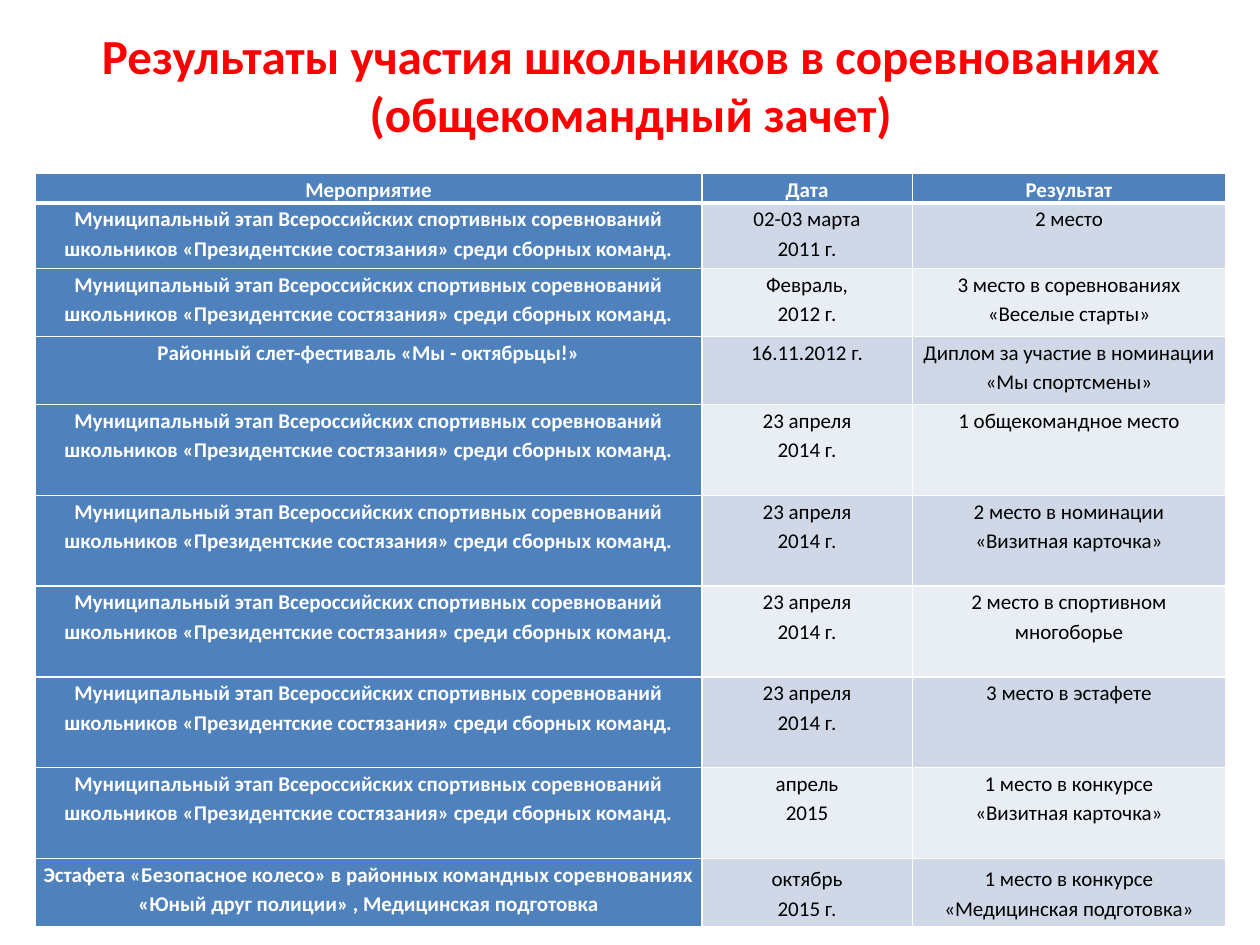
from dataclasses import dataclass

from lxml.etree import SubElement
from pptx import Presentation
from pptx.dml.color import RGBColor as Rgb
from pptx.enum.text import MSO_ANCHOR as Anchor, PP_ALIGN as Align
from pptx.oxml.ns import qn
from pptx.util import Cm, Pt


@dataclass(frozen=True)
class Theme:
    font: str = "Calibri"
    title_size: int = 28
    cell_size: int = 12
    title: str = "FF0000"
    accent: str = "4F81BD"
    light: str = "FFFFFF"
    dark: str = "000000"
    bands: tuple = ("D0D8E8", "E9EDF4")
    thin: int = 1
    thick: int = 3


def write(frame, text, *, font, size, color, bold=False, spacing=None):
    """Fill a text frame: one centred paragraph for each line of text."""
    for index, line in enumerate(text.split("\n")):
        para = frame.add_paragraph() if index else frame.paragraphs[0]
        para.alignment = Align.CENTER
        if spacing:
            para.line_spacing = spacing
        # A vertical tab becomes a line break inside the paragraph
        para.text = line
        for span in para.runs:
            span.font.name = font
            span.font.size = Pt(size)
            span.font.bold = bold
            span.font.color.rgb = Rgb.from_string(color)


class SlideBuilder:
    def __init__(self, deck, theme):
        self.theme = theme
        self.slide = deck.slides.add_slide(deck.slide_layouts[5])

    def title(self, text, left, top, width, height, bottom_inset):
        box = self.slide.shapes.title
        box.left, box.top, box.width, box.height = left, top, width, height
        frame = box.text_frame
        frame.word_wrap = True
        frame.vertical_anchor = Anchor.MIDDLE
        frame.margin_bottom = bottom_inset
        write(frame, text, font=self.theme.font, size=self.theme.title_size,
              color=self.theme.title, bold=True)

    def borders(self, cell, top, bottom):
        properties = cell._tc.get_or_add_tcPr()
        sides = {"L": self.theme.thin, "R": self.theme.thin, "T": top, "B": bottom}
        for index, (side, weight) in enumerate(sides.items()):
            line = SubElement(properties, qn(f"a:ln{side}"), w=str(Pt(weight)))
            fill = SubElement(line, qn("a:solidFill"))
            SubElement(fill, qn("a:srgbClr"), val=self.theme.light)
            properties.insert(index, line)

    def cell(self, cell, text, row, column, anchor):
        theme = self.theme
        heading = row == 0 or column == 0
        fill = theme.accent if heading else theme.bands[(row - 1) % 2]
        cell.fill.solid()
        cell.fill.fore_color.rgb = Rgb.from_string(fill)
        cell.margin_left = cell.margin_right = Cm(0.13)
        cell.margin_top = cell.margin_bottom = 0
        cell.vertical_anchor = anchor
        # The header is set off by a thick rule below it
        self.borders(cell, top=theme.thick if row == 1 else theme.thin,
                     bottom=theme.thick if row == 0 else theme.thin)
        write(cell.text_frame, text, font=theme.font, size=theme.cell_size,
              color=theme.light if heading else theme.dark, bold=heading, spacing=1.15)

    def table(self, records, left, top, widths, heights):
        table = self.slide.shapes.add_table(
            len(records), len(widths), left, top, sum(widths), sum(heights)).table
        table.first_col = True
        for column, width in zip(table.columns, widths):
            column.width = width
        for row, height in zip(table.rows, heights):
            row.height = height
        for row, record in enumerate(records):
            for column, text in enumerate(record):
                closing = row == len(records) - 1 and column > 0
                anchor = Anchor.MIDDLE if closing else Anchor.TOP
                self.cell(table.cell(row, column), text, row, column, anchor)


# Table content
MUNICIPAL = ("Муниципальный этап Всероссийских спортивных соревнований "
             "школьников «Президентские состязания» среди сборных команд.")
APRIL = "23 апреля\n2014 г."
RESULTS = [
    ("Мероприятие", "Дата", "Результат"),
    (MUNICIPAL, "02-03 марта\n2011 г.", "2 место"),
    (MUNICIPAL, "Февраль,\n2012 г.", "3 место в соревнованиях «Веселые старты»"),
    ("Районный слет-фестиваль «Мы - октябрьцы!»", "16.11.2012 г.",
     "Диплом за участие в номинации «Мы спортсмены»"),
    (MUNICIPAL, APRIL, "1 общекомандное место"),
    (MUNICIPAL, APRIL, "2 место в номинации\n«Визитная карточка»"),
    (MUNICIPAL, APRIL, "2 место в спортивном многоборье"),
    (MUNICIPAL, APRIL, "3 место в эстафете"),
    (MUNICIPAL, "апрель\n2015", "1 место в конкурсе\n«Визитная карточка»"),
    ("Эстафета «Безопасное колесо» в районных командных соревнованиях "
     "«Юный друг полиции» , Медицинская подготовка", "октябрь\n2015 г.",
     "1 место в конкурсе «Медицинская подготовка»"),
]


def main():
    deck = Presentation()
    deck.slide_width, deck.slide_height = Cm(25.4), Cm(19.05)
    page = SlideBuilder(deck, Theme())

    # Title above the table, on the same left edge and width
    left, table_top = Cm(0.71), Cm(3.5)
    widths = [Cm(13.44), Cm(4.24), Cm(6.32)]
    title_top = Cm(0.91)
    page.title("Результаты участия школьников в соревнованиях\v(общекомандный зачет)",
               left, title_top, sum(widths), table_top - title_top, Cm(1.15))

    # Competition results
    medium, tall = Cm(1.37), Cm(1.83)
    heights = [Cm(0.56), Cm(1.32), medium, medium, *[tall] * 5, medium]
    page.table(RESULTS, left, table_top, widths, heights)
    deck.save("out.pptx")


if __name__ == "__main__":
    main()
